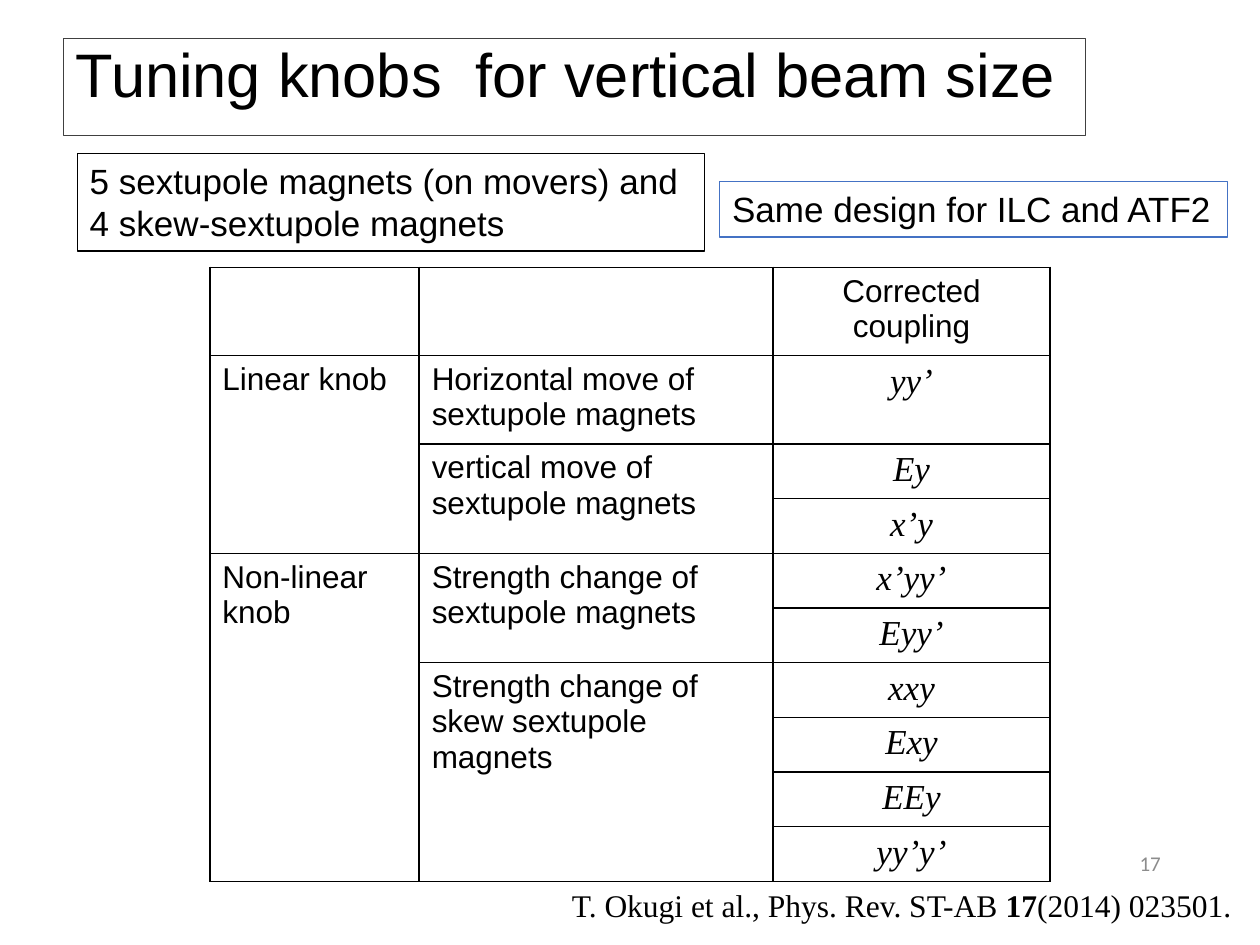
"""Build the slide on tuning knobs for vertical beam size."""
import pptx
import pptx.dml.color
import pptx.enum.shapes
import pptx.enum.text
import pptx.oxml
import pptx.oxml.ns
import pptx.util

Cm = pptx.util.Cm
Pt = pptx.util.Pt
RGB = pptx.dml.color.RGBColor
Align = pptx.enum.text.PP_ALIGN
Anchor = pptx.enum.text.MSO_ANCHOR
Fit = pptx.enum.text.MSO_AUTO_SIZE

BLACK = RGB(0x00, 0x00, 0x00)
DARK = RGB(0x40, 0x40, 0x40)
BLUE = RGB(0x44, 0x72, 0xC4)
GREY = RGB(0x8C, 0x8C, 0x8C)
SANS, SERIF = "Arial", "Times New Roman"


def add_run(para, text, size, font=SANS, color=BLACK, bold=False, slant=False):
    run = para.add_run()
    run.text = text
    run.font.size = Pt(size)
    run.font.name = font
    run.font.color.rgb = color
    run.font.bold = bold
    run.font.italic = slant


deck = pptx.Presentation()
deck.slide_width, deck.slide_height = Cm(25.4), Cm(19.05)
slide = deck.slides.add_slide(deck.slide_layouts[6])

boxes = [
    ((1.28, 0.77, 20.6, 1.96), DARK, 35.1, ["Tuning knobs  for vertical beam size"]),
    ((1.56, 3.1, 12.65, 1.96), BLACK, 20,
     ["5 sextupole magnets (on movers) and", "4 skew-sextupole magnets"]),
    ((14.51, 3.66, 10.24, 1.12), BLUE, 20, ["Same design for ILC and ATF2"]),
]
for place, edge, size, lines in boxes:
    title = edge == DARK
    box = slide.shapes.add_shape(
        pptx.enum.shapes.MSO_SHAPE.RECTANGLE, *map(Cm, place))
    box.shadow.inherit = False
    box.fill.background()
    box.line.color.rgb = edge
    box.line.width = Pt(0.75)
    frame = box.text_frame
    frame.word_wrap = title
    frame.auto_size = Fit.NONE if title else Fit.SHAPE_TO_FIT_TEXT
    frame.vertical_anchor = Anchor.TOP
    for i, line in enumerate(lines):
        para = frame.add_paragraph() if i else frame.paragraphs[0]
        para.alignment = Align.LEFT
        if title:
            para.line_spacing = 0.9
        add_run(para, line, size)

widths = [4.22, 7.13, 5.59]
heights = [0.84, 1.78] + [1.02] * 8
holder = slide.shapes.add_table(
    len(heights), len(widths), Cm(4.23), Cm(5.39),
    Cm(sum(widths)), Cm(sum(heights)))
grid = holder.table
grid.first_row = grid.horz_banding = False
for col, width in zip(grid.columns, widths):
    col.width = Cm(width)
for row, height in zip(grid.rows, heights):
    row.height = Cm(height)
holder.height = Cm(12.37)

for cell in grid.iter_cells():
    props = cell._tc.get_or_add_tcPr()
    for side in "LRTB":
        props.append(pptx.oxml.parse_xml(
            f'<a:ln{side} {pptx.oxml.ns.nsdecls("a")} w="12700"><a:solidFill>'
            f'<a:srgbClr val="{BLACK}"/></a:solidFill></a:ln{side}>'))
    cell.fill.background()

labels = [
    (1, 0, 3, "Linear knob"),
    (1, 1, 1, "Horizontal move of sextupole magnets"),
    (2, 1, 2, "vertical move of sextupole magnets"),
    (4, 0, 6, "Non-linear knob"),
    (4, 1, 2, "Strength change of sextupole magnets"),
    (6, 1, 4, "Strength change of skew sextupole magnets"),
]
for top, col, span, text in labels:
    cell = grid.cell(top, col)
    if span > 1:
        cell.merge(grid.cell(top + span - 1, col))
    add_run(cell.text_frame.paragraphs[0], text, 18)

terms = ["yy’", "Ey", "x’y", "x’yy’", "Eyy’", "xxy", "Exy", "EEy", "yy’y’"]
for i, text in enumerate(["Corrected coupling"] + terms):
    para = grid.cell(i, 2).text_frame.paragraphs[0]
    para.alignment = Align.CENTER
    if i:
        add_run(para, text, 20, SERIF, slant=True)
    else:
        add_run(para, text, 18)

frame = slide.shapes.add_textbox(Cm(11.28), Cm(17.73), Cm(13.87), Cm(1.02)).text_frame
frame.word_wrap = True
frame.auto_size = Fit.SHAPE_TO_FIT_TEXT
para = frame.paragraphs[0]
add_run(para, "T. Okugi et al., Phys. Rev. ST-AB ", 18, SERIF)
add_run(para, "17", 18, SERIF, bold=True)
add_run(para, "(2014) 023501.", 18, SERIF)

frame = slide.shapes.add_textbox(Cm(17.93), Cm(16.9), Cm(5.72), Cm(1.02)).text_frame
frame.word_wrap = True
frame.vertical_anchor = Anchor.MIDDLE
para = frame.paragraphs[0]
para.alignment = Align.RIGHT
add_run(para, "17", 12, "Calibri", GREY)

deck.save("out.pptx")
